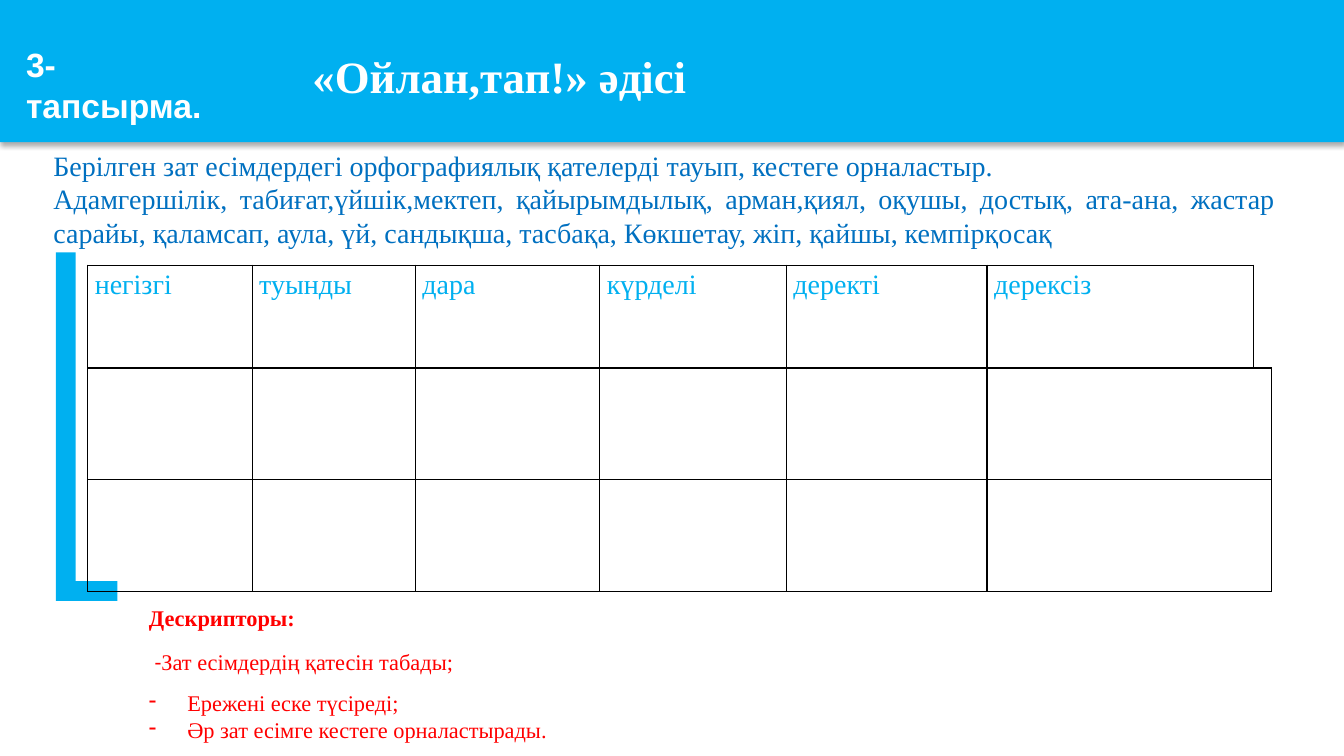
from lxml.etree import SubElement
from pptx import Presentation
from pptx.dml.color import RGBColor
from pptx.enum.shapes import MSO_SHAPE
from pptx.enum.text import MSO_ANCHOR, PP_ALIGN
from pptx.oxml.ns import qn
from pptx.util import Inches, Pt

SERIF = "Times New Roman"
SKY, BLUE, RED, WHITE, BLACK = "00B0F0", "0070C0", "FF0000", "FFFFFF", "000000"
colour = RGBColor.from_string

deck = Presentation()
deck.slide_width, deck.slide_height = Inches(13.33), Inches(7.5)
slide = deck.slides.add_slide(deck.slide_layouts[6])

# The grid has 100 columns and 100 rows
COL, ROW = deck.slide_width / 100, deck.slide_height / 100


def area(left, top, width, height):
    return int(left * COL), int(top * ROW), int(width * COL), int(height * ROW)


def add_run(paragraph, text, size, ink, bold=False, font=SERIF):
    run = paragraph.add_run()
    run.text = text
    run.font.size, run.font.name, run.font.bold = Pt(size), font, bold
    run.font.color.rgb = colour(ink)


# Banner with the method's name
banner = slide.shapes.add_shape(MSO_SHAPE.RECTANGLE, *area(0, 0, 100, 18.8))
banner.fill.solid()
banner.fill.fore_color.rgb = colour(SKY)
banner.line.fill.background()
banner.shadow.inherit = False
effects = banner._element.spPr.find(qn("a:effectLst"))
shade = SubElement(effects, qn("a:outerShdw"), blurRad=str(Pt(3.5)),
                   dist=str(Pt(2.2)), dir="5400000", rotWithShape="0")
shade_ink = SubElement(shade, qn("a:srgbClr"), val=BLACK)
SubElement(shade_ink, qn("a:alpha"), val="32000")
banner.text_frame.margin_left = int(23.25 * COL)
banner.text_frame.vertical_anchor = MSO_ANCHOR.MIDDLE
method = banner.text_frame.paragraphs[0]
method.alignment = PP_ALIGN.JUSTIFY
method.line_spacing, method.space_after = 1.15, Pt(10)
add_run(method, "«Ойлан,тап!» әдісі", 32, WHITE, True)

# Task number
task = slide.shapes.add_textbox(*area(1.2, 5.2, 16.05, 12)).text_frame
task.word_wrap = True
add_run(task.paragraphs[0], "3-тапсырма.", 24, WHITE, True, "Arial")

# Corner bracket beside the table
bracket = slide.shapes.add_shape(MSO_SHAPE.BENT_UP_ARROW, *area(-6.15, 51.73, 25.2, 8.13))
bracket.rotation = 90
for index, share in enumerate((0.32, 0, 0)):
    bracket.adjustments[index] = share
bracket.fill.solid()
bracket.fill.fore_color.rgb = colour(SKY)
bracket.line.fill.background()
bracket.shadow.inherit = False

# Table of noun kinds; the narrow last column belongs to the empty rows only
kinds = ["негізгі", "туынды", "дара", "күрделі", "деректі", "дерексіз", ""]
kind_widths = [12.23, 12.15, 13.73, 13.88, 14.93, 19.8, 0.75]
row_heights = [13.6, 14.8, 14.8]
nouns = slide.shapes.add_table(
    len(row_heights), len(kinds),
    *area(6.53, 35.07, sum(kind_widths), sum(row_heights))).table
nouns.first_row = nouns.horz_banding = False
for column, width in zip(nouns.columns, kind_widths):
    column.width = int(width * COL)
for row, height in zip(nouns.rows, row_heights):
    row.height = int(height * ROW)
for r in (1, 2):
    nouns.cell(r, 5).merge(nouns.cell(r, 6))

for r in range(len(row_heights)):
    for c, kind in enumerate(kinds):
        cell = nouns.cell(r, c)
        cell.margin_left = cell.margin_right = Inches(0.07)
        cell.margin_top = cell.margin_bottom = 0
        for side in "LRTB":
            border = SubElement(cell._tc.get_or_add_tcPr(), qn("a:ln" + side), w=str(Pt(1)))
            if (r, c) == (0, 6) and side in "RT":
                SubElement(border, qn("a:noFill"))
            else:
                SubElement(SubElement(border, qn("a:solidFill")), qn("a:srgbClr"), val=BLACK)
        cell.fill.background()
        if r == 0 and kind:
            heading = cell.text_frame.paragraphs[0]
            heading.alignment, heading.line_spacing = PP_ALIGN.JUSTIFY, 1.15
            add_run(heading, kind, 20, SKY)

# Instructions and word list
instructions = slide.shapes.add_textbox(*area(3.23, 18.8, 92.42, 14.93)).text_frame
instructions.word_wrap = True
instructions.vertical_anchor = MSO_ANCHOR.MIDDLE
sentences = [
    "Берілген зат есімдердегі орфографиялық қателерді тауып, кестеге орналастыр.",
    "Адамгершілік, табиғат,үйшік,мектеп, қайырымдылық, арман,қиял, оқушы, достық, "
    "ата-ана, жастар сарайы, қаламсап, аула, үй, сандықша, тасбақа, Көкшетау, жіп, "
    "қайшы, кемпірқосақ",
]
for index, sentence in enumerate(sentences):
    line = instructions.add_paragraph() if index else instructions.paragraphs[0]
    line.alignment = PP_ALIGN.JUSTIFY
    add_run(line, sentence, 20, BLUE)

# Descriptors
descriptors = slide.shapes.add_textbox(*area(10.35, 78.67, 66.39, 20.8)).text_frame
descriptors.word_wrap = True
title = descriptors.paragraphs[0]
add_run(title, "Дескрипторы:", 16, RED, True)
first = descriptors.add_paragraph()
add_run(first, " ", 16, RED, True)
add_run(first, "-", 16, RED, font="Calibri")
add_run(first, "Зат есімдердің қатесін табады;", 16, RED)
for line in (title, first):
    line.alignment = PP_ALIGN.JUSTIFY
    line.line_spacing, line.space_after = 1.15, Pt(10)

for criterion in ("Ережені еске түсіреді;", "Әр зат есімге кестеге орналастырады."):
    line = descriptors.add_paragraph()
    line.alignment = PP_ALIGN.JUSTIFY
    props = line._p.get_or_add_pPr()
    props.set("marL", str(Inches(0.38)))
    props.set("indent", str(-Inches(0.38)))
    SubElement(props, qn("a:buChar"), char="-")
    add_run(line, criterion, 16, RED)

deck.save("out.pptx")
